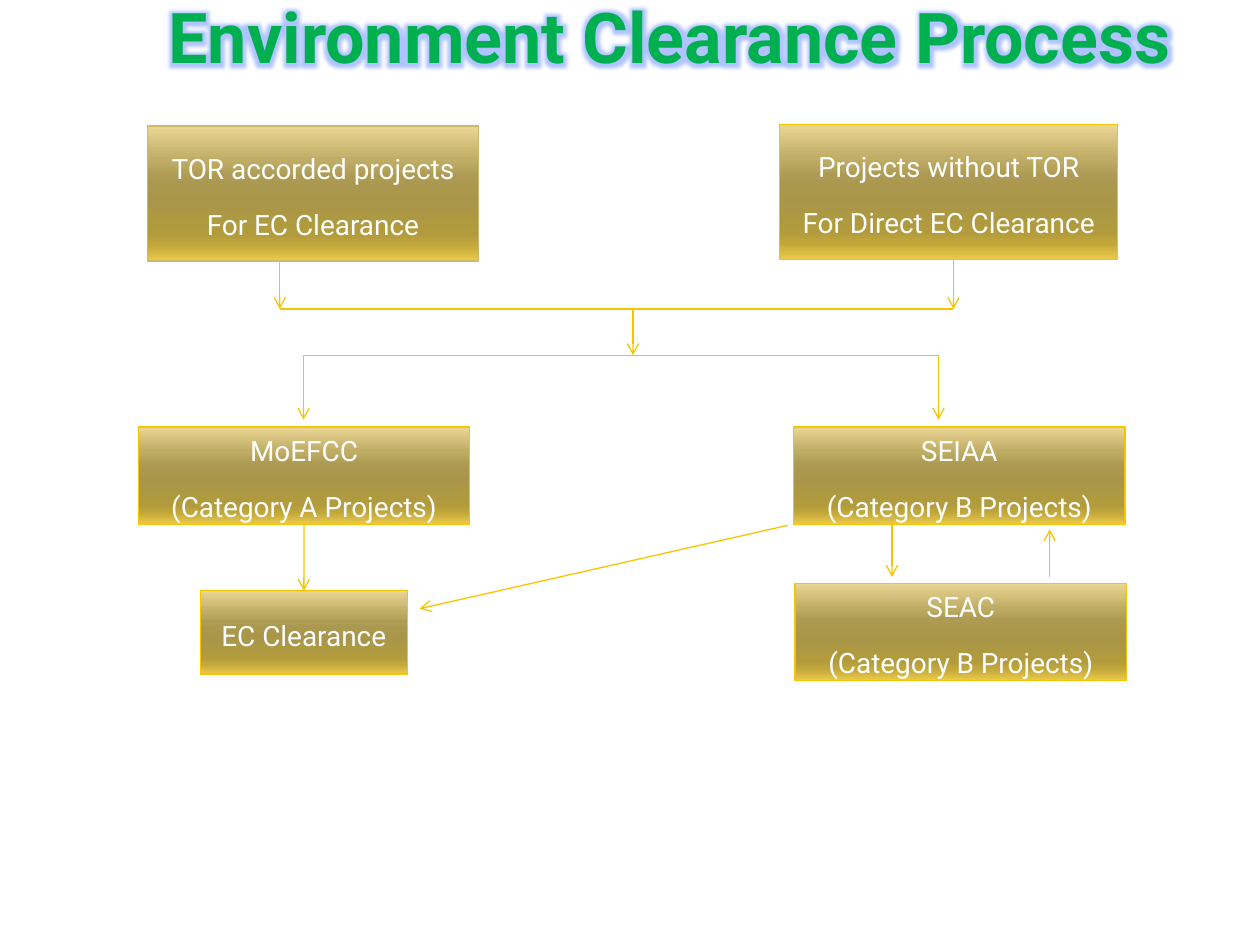
"""Build the Environment Clearance Process flowchart slide."""
from lxml.etree import SubElement, fromstring
from pptx import Presentation
from pptx.dml.color import RGBColor
from pptx.enum.shapes import MSO_CONNECTOR, MSO_SHAPE
from pptx.enum.text import MSO_ANCHOR, MSO_AUTO_SIZE, PP_ALIGN
from pptx.oxml.ns import nsdecls, qn
from pptx.util import Cm, Pt

GOLD = "F7C500"
GRADIENT = [(0, "EBD795"), (25, "BFAC65"), (38, "AD9A53"), (55, "A99648"),
            (80, "B29B3D"), (88, "C2A73A"), (100, "EBCA4B")]


def color(value):
    return RGBColor.from_string(value)


def write(paragraph, text, size=16, fill="FFFFFF", bold=False, align=PP_ALIGN.CENTER,
          line_spacing=1.15, space_after=10):
    run = paragraph.add_run()
    run.text = text
    run.font.name = "Roboto"
    run.font.size = Pt(size)
    run.font.bold = bold
    run.font.color.rgb = color(fill)
    paragraph.alignment = align
    paragraph.line_spacing = line_spacing
    paragraph.space_before = Pt(0)
    paragraph.space_after = Pt(space_after)
    return run


class Flowchart:
    def __init__(self, presentation):
        self.line_width = Pt(0.75)
        self.slide = presentation.slides.add_slide(presentation.slide_layouts[5])

    def title(self, text):
        shape = self.slide.shapes.title
        shape.left, shape.top, shape.width, shape.height = Cm(0), Cm(0), Cm(25.4), Cm(1.7)
        frame = shape.text_frame
        frame.auto_size = MSO_AUTO_SIZE.NONE
        frame.vertical_anchor = MSO_ANCHOR.BOTTOM
        frame.margin_left = Cm(3.4)
        run = write(frame.paragraphs[0], text, size=40, fill="00B050", bold=True,
                    align=PP_ALIGN.LEFT, line_spacing=1.0, space_after=0)
        glow = fromstring(
            f'<a:effectLst {nsdecls("a")}><a:glow rad="101600"><a:srgbClr val="6088FF">'
            '<a:alpha val="50000"/></a:srgbClr></a:glow></a:effectLst>')
        run.font._element.find(qn("a:solidFill")).addnext(glow)

    def box(self, left, top, width, height, *lines, outline=GOLD):
        shape = self.slide.shapes.add_shape(
            MSO_SHAPE.FLOWCHART_PROCESS, Cm(left), Cm(top), Cm(width), Cm(height))
        shape.shadow.inherit = False
        shape.line.color.rgb = color(outline)
        shape.line.width = self.line_width
        shape.fill.gradient()
        shape.fill.gradient_angle = 270
        stops = shape._element.spPr.find(qn("a:gradFill")).find(qn("a:gsLst"))
        for stop in list(stops):
            stops.remove(stop)
        for position, value in GRADIENT:
            stop = SubElement(stops, qn("a:gs"), pos=str(position * 1000))
            SubElement(stop, qn("a:srgbClr"), val=value)
        frame = shape.text_frame
        frame.word_wrap = True
        frame.vertical_anchor = MSO_ANCHOR.MIDDLE
        for index, line in enumerate(lines):
            paragraph = frame.add_paragraph() if index else frame.paragraphs[0]
            write(paragraph, line)
        return shape

    def connector(self, start, end, arrow=True):
        connector = self.slide.shapes.add_connector(
            MSO_CONNECTOR.STRAIGHT, *(Cm(value) for value in (*start, *end)))
        connector.line.color.rgb = color(GOLD)
        connector.line.width = self.line_width
        if arrow:
            SubElement(connector.line._get_or_add_ln(), qn("a:tailEnd"), type="arrow")
        SubElement(connector._element.spPr, qn("a:effectLst"))
        return connector


def main():
    presentation = Presentation()
    presentation.slide_width, presentation.slide_height = Cm(25.4), Cm(19.05)
    chart = Flowchart(presentation)
    chart.title("Environment Clearance Process")

    chart.box(2.97, 2.54, 6.68, 2.72, "TOR accorded projects", "For EC Clearance",
              outline="CEB966")
    chart.box(15.72, 2.51, 6.81, 2.72, "Projects without TOR", "For Direct EC Clearance")
    ministry = chart.box(2.79, 8.61, 6.68, 1.96, "MoEFCC", "(Category A Projects)")
    chart.box(16, 8.61, 6.68, 1.96, "SEIAA", "(Category B Projects)")
    chart.box(16.03, 11.76, 6.68, 1.96, "SEAC", "(Category B Projects)")
    clearance = chart.box(4.04, 11.91, 4.17, 1.68, "EC Clearance")

    merge_y, split_y = 6.23, 7.16
    chart.connector((5.64, merge_y), (19.22, merge_y), arrow=False)
    chart.connector((6.12, split_y), (18.92, split_y), arrow=False)
    for start, end in [
        ((5.64, 5.26), (5.64, merge_y)),
        ((19.22, 5.23), (19.22, merge_y)),
        ((12.76, merge_y), (12.76, split_y)),
        ((6.12, split_y), (6.12, 8.46)),
        ((18.92, split_y), (18.92, 8.46)),
        ((17.98, 10.57), (17.98, 11.63)),
        ((21.16, 11.63), (21.16, 10.67)),
        ((15.88, 10.59), (8.46, 12.27)),
    ]:
        chart.connector(start, end)
    approval = chart.connector((6.13, 10.57), (6.13, 11.91))
    approval.begin_connect(ministry, 2)
    approval.end_connect(clearance, 0)

    presentation.save("out.pptx")


if __name__ == "__main__":
    main()
